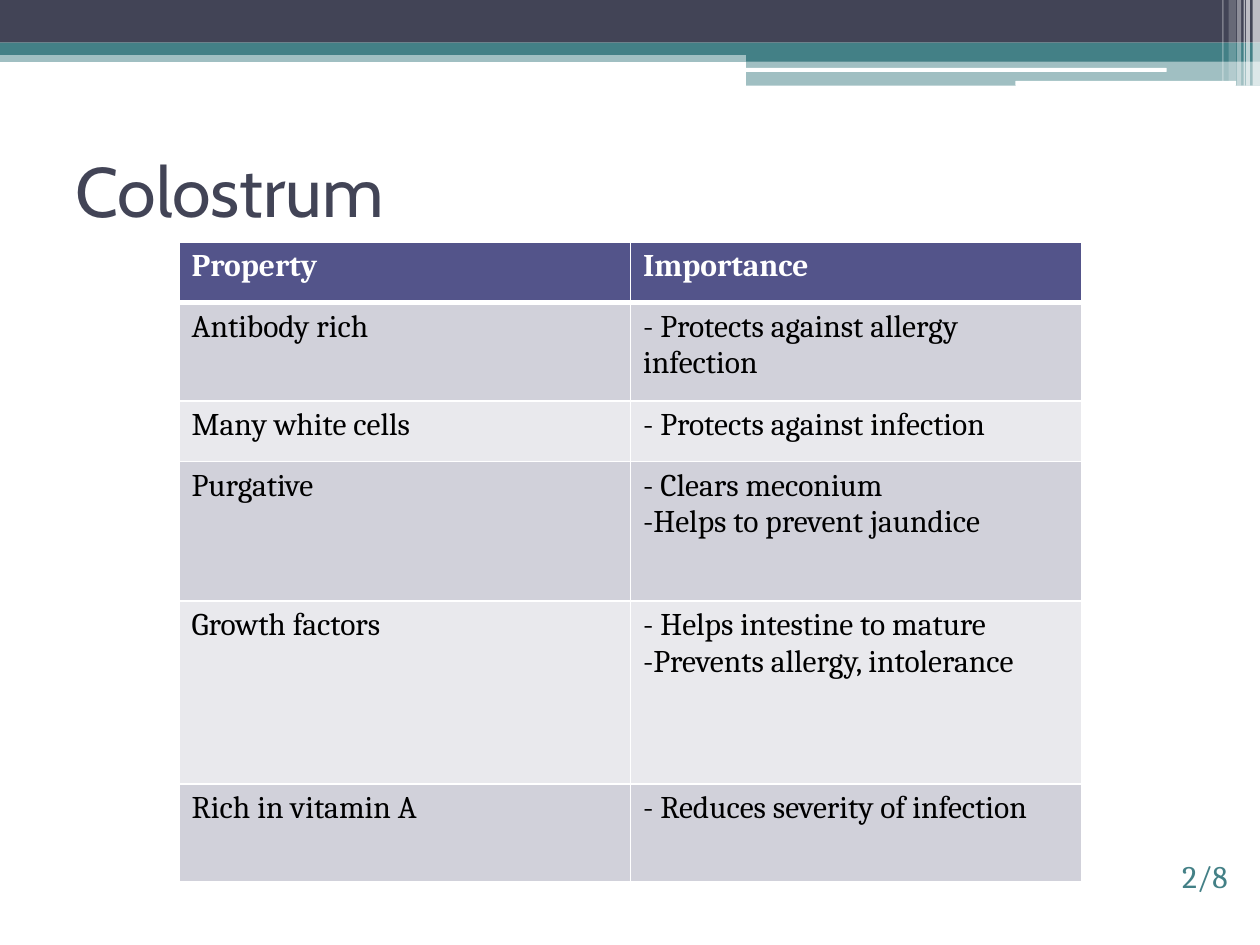
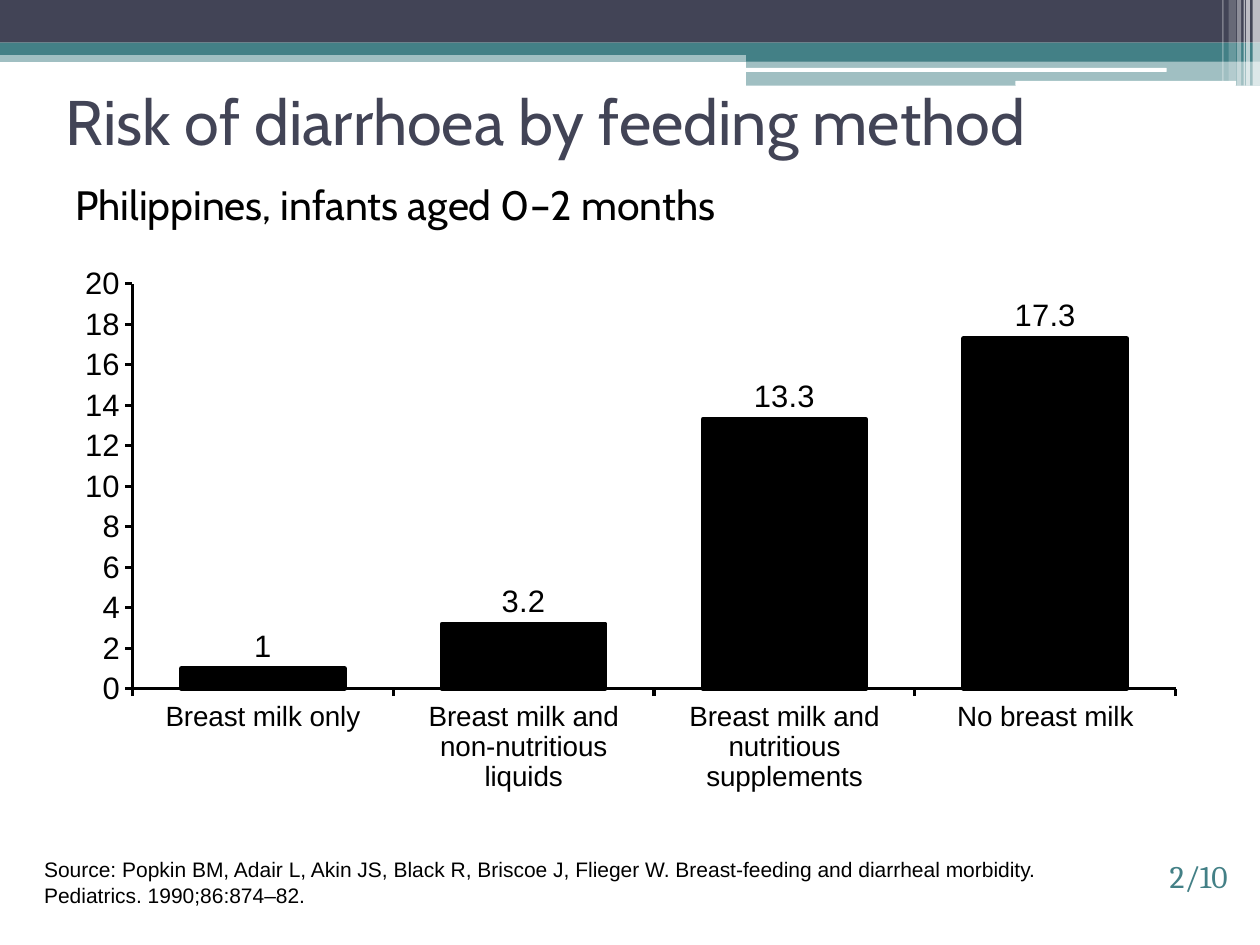
import pptx
import pptx.chart.data
import pptx.dml.color
import pptx.enum.chart
import pptx.enum.shapes
import pptx.enum.text
import pptx.oxml
import pptx.oxml.ns
import pptx.util

Cm = pptx.util.Cm
Pt = pptx.util.Pt
SHAPE = pptx.enum.shapes.MSO_SHAPE
ALIGN = pptx.enum.text.PP_ALIGN
ANCHOR = pptx.enum.text.MSO_ANCHOR

COLOURS = {
    "navy": "424456",
    "teal": "438086",
    "header": "53548A",
    "odd_row": "D1D1DA",
    "even_row": "E9E9ED",
    "white": "FFFFFF",
    "black": "000000",
}

BANDS = [
    (0, 1.02, 25.4, 0.23, "teal", 50),
    (0, 0, 25.4, 0.86, "navy", 100),
    (0, 0.86, 25.4, 0.25, "teal", 100),
    (15.04, 0.99, 10.36, 0.25, "teal", 100),
    (15.04, 1.22, 10.36, 0.51, "teal", 50),
]
HIGHLIGHTS = [(15.01, 1.37, 8.51, 0.08), (20.47, 1.63, 4.45, 0.1)]
STRIPES = [
    (25.25, 0.15, 1.73, 65),
    (25.12, 0.08, 1.73, 65),
    (25.07, 0.03, 1.73, 60),
    (24.94, 0.08, 1.73, 40),
    (24.77, 0.15, 1.63, 20),
    (24.64, 0.03, 1.63, 30),
]

PROPERTIES = [
    ("Property", "Importance", 1.22),
    ("Antibody rich", "- Protects against allergy infection", 1.98),
    ("Many white cells", "- Protects against infection", 1.22),
    ("Purgative", "- Clears meconium\n-Helps to prevent jaundice", 2.82),
    ("Growth factors", "- Helps intestine to mature\n-Prevents allergy, intolerance", 3.68),
    ("Rich in vitamin A", "- Reduces severity of infection", 1.98),
]

DIARRHOEA_RISK = {
    "Breast milk only": 1,
    "Breast milk and non-nutritious liquids": 3.2,
    "Breast milk and nutritious supplements": 13.3,
    "No breast milk": 17.3,
}


def rgb(colour):
    return pptx.dml.color.RGBColor.from_string(COLOURS[colour])


def xml(markup):
    return pptx.oxml.parse_xml(markup)


class Deck:
    heading_font = "Cabin"
    body_font = "Cambria"
    chart_font = "Arial"

    def __init__(self):
        self.presentation = pptx.Presentation()
        self.presentation.slide_width = Cm(25.4)
        self.presentation.slide_height = Cm(19.05)
        self.slide = None

    def new_slide(self, heading, box, size, page):
        layout = self.presentation.slide_layouts.get_by_name("Title Only")
        self.slide = self.presentation.slides.add_slide(layout)
        for left, top, width, height, colour, opacity in BANDS:
            self.bar(SHAPE.RECTANGLE, (left, top, width, height), colour, opacity)
        for highlight in HIGHLIGHTS:
            self.bar(SHAPE.ROUNDED_RECTANGLE, highlight, "white")
        for left, width, height, opacity in STRIPES:
            self.bar(SHAPE.RECTANGLE, (left, 0, width, height), "white", opacity)
        title = self.slide.shapes.title
        title.left, title.top, title.width, title.height = map(Cm, box)
        self.fill_frame(title.text_frame, heading, self.heading_font, size, "navy",
                        anchor=ANCHOR.MIDDLE)
        self.text(page, (21.39, 17.15, 3.61, 1.27), self.body_font, 18, "teal", align=ALIGN.RIGHT)

    def bar(self, outline, box, colour, opacity=100):
        bar = self.slide.shapes.add_shape(outline, *map(Cm, box))
        bar.shadow.inherit = False
        bar.line.fill.background()
        bar.fill.solid()
        bar.fill.fore_color.rgb = rgb(colour)
        if opacity < 100:
            tint = bar._element.spPr.find(pptx.oxml.ns.qn("a:solidFill"))[0]
            tint.append(xml(f'<a:alpha {pptx.oxml.ns.nsdecls("a")} val="{opacity * 1000}"/>'))

    def style(self, font, name, size, colour="black", bold=False):
        font.name = name
        font.size = Pt(size)
        font.bold = bold
        font.color.rgb = rgb(colour)

    def fill_frame(self, frame, words, font, size, colour="black",
                   align=ALIGN.LEFT, anchor=ANCHOR.TOP):
        frame.text = words
        frame.word_wrap = True
        frame.auto_size = pptx.enum.text.MSO_AUTO_SIZE.NONE
        frame.vertical_anchor = anchor
        for paragraph in frame.paragraphs:
            paragraph.alignment = align
            for run in paragraph.runs:
                self.style(run.font, font, size, colour)

    def text(self, words, box, font, size, colour="black", **layout):
        words_box = self.slide.shapes.add_textbox(*map(Cm, box))
        self.fill_frame(words_box.text_frame, words, font, size, colour, **layout)

    def cell_borders(self, cell, top, bottom):
        properties = cell._tc.get_or_add_tcPr()
        widths = {"L": 1, "R": 1, "T": top, "B": bottom}
        for place, (side, width) in enumerate(widths.items()):
            properties.insert(place, xml(
                f'<a:ln{side} {pptx.oxml.ns.nsdecls("a")} w="{Pt(width)}"><a:solidFill>'
                f'<a:srgbClr val="{COLOURS["white"]}"/></a:solidFill></a:ln{side}>'))

    def table(self, rows, left, top, column_width):
        total = sum(height for _, _, height in rows)
        table = self.slide.shapes.add_table(
            len(rows), 2, Cm(left), Cm(top), Cm(2 * column_width), Cm(total)).table
        table.horz_banding = False
        for index, (*entries, height) in enumerate(rows):
            is_header = index == 0
            fill = "header" if is_header else "odd_row" if index % 2 else "even_row"
            table.rows[index].height = Cm(height)
            for column, words in enumerate(entries):
                cell = table.cell(index, column)
                cell.fill.solid()
                cell.fill.fore_color.rgb = rgb(fill)
                self.cell_borders(cell, 3 if index == 1 else 1, 3 if is_header else 1)
                cell.text_frame.text = words
                for paragraph in cell.text_frame.paragraphs:
                    for run in paragraph.runs:
                        self.style(run.font, self.body_font, 18,
                                   "white" if is_header else "black", is_header)

    def axis(self, axis, size):
        axis.has_major_gridlines = False
        axis.major_tick_mark = pptx.enum.chart.XL_TICK_MARK.OUTSIDE
        axis.minor_tick_mark = pptx.enum.chart.XL_TICK_MARK.NONE
        axis.format.line.color.rgb = rgb("black")
        axis.format.line.width = Pt(1.77)
        self.style(axis.tick_labels.font, self.chart_font, size)

    def column_chart(self, values, box, plot_area):
        data = pptx.chart.data.CategoryChartData()
        data.categories = list(values)
        data.add_series("Series 1", list(values.values()))
        chart = self.slide.shapes.add_chart(
            pptx.enum.chart.XL_CHART_TYPE.COLUMN_CLUSTERED, *map(Cm, box), data).chart
        chart.has_title = False
        chart.has_legend = False
        self.style(chart.font, self.chart_font, 15.9)
        self.axis(chart.category_axis, 15.9)
        self.axis(chart.value_axis, 17.7)
        chart.value_axis.minimum_scale = 0
        chart.value_axis.maximum_scale = 20
        chart.value_axis.major_unit = 2
        plot = chart.plots[0]
        plot.gap_width = 60
        plot.vary_by_categories = False
        columns = plot.series[0].format
        columns.fill.solid()
        columns.fill.fore_color.rgb = rgb("black")
        columns.line.color.rgb = rgb("black")
        columns.line.width = Pt(2.66)
        plot.has_data_labels = True
        labels = plot.data_labels
        labels.show_value = True
        labels.position = pptx.enum.chart.XL_LABEL_POSITION.OUTSIDE_END
        self.style(labels.font, self.chart_font, 17.7)
        self.place_plot(chart, plot_area)

    def place_plot(self, chart, plot_area):
        area = chart._chartSpace.chart.plotArea
        for automatic in area.findall(pptx.oxml.ns.qn("c:layout")):
            area.remove(automatic)
        sizes = "".join(f'<c:{key} val="{share}"/>' for key, share in zip("xywh", plot_area))
        area.insert(0, xml(
            f'<c:layout {pptx.oxml.ns.nsdecls("c")}><c:manualLayout><c:layoutTarget val="inner"/>'
            f'<c:xMode val="edge"/><c:yMode val="edge"/>{sizes}</c:manualLayout></c:layout>'))


def main():
    deck = Deck()

    deck.new_slide("Colostrum", (1.27, 2.34, 22.86, 2.97), 40, "2/8")
    deck.table(PROPERTIES, 3.61, 4.88, 9.1)

    deck.new_slide("Risk of diarrhoea by feeding method", (1.07, 1.7, 22.86, 1.47), 36, "2/10")
    deck.text("Philippines, infants aged 0–2 months", (1.27, 3.38, 22.86, 1.47),
              deck.heading_font, 23.4, anchor=ANCHOR.MIDDLE)
    deck.column_chart(DIARRHOEA_RISK, (1.07, 4.88, 22.86, 12.01), (0.07, 0.07, 0.92, 0.68))
    deck.text("Source: Popkin BM, Adair L, Akin JS, Black R, Briscoe J, Flieger W. "
              "Breast-feeding and diarrheal morbidity. Pediatrics. 1990;86:874–82.",
              (0.64, 17.15, 20.75, 1.27), deck.chart_font, 12)

    deck.presentation.save("out.pptx")


if __name__ == "__main__":
    main()
